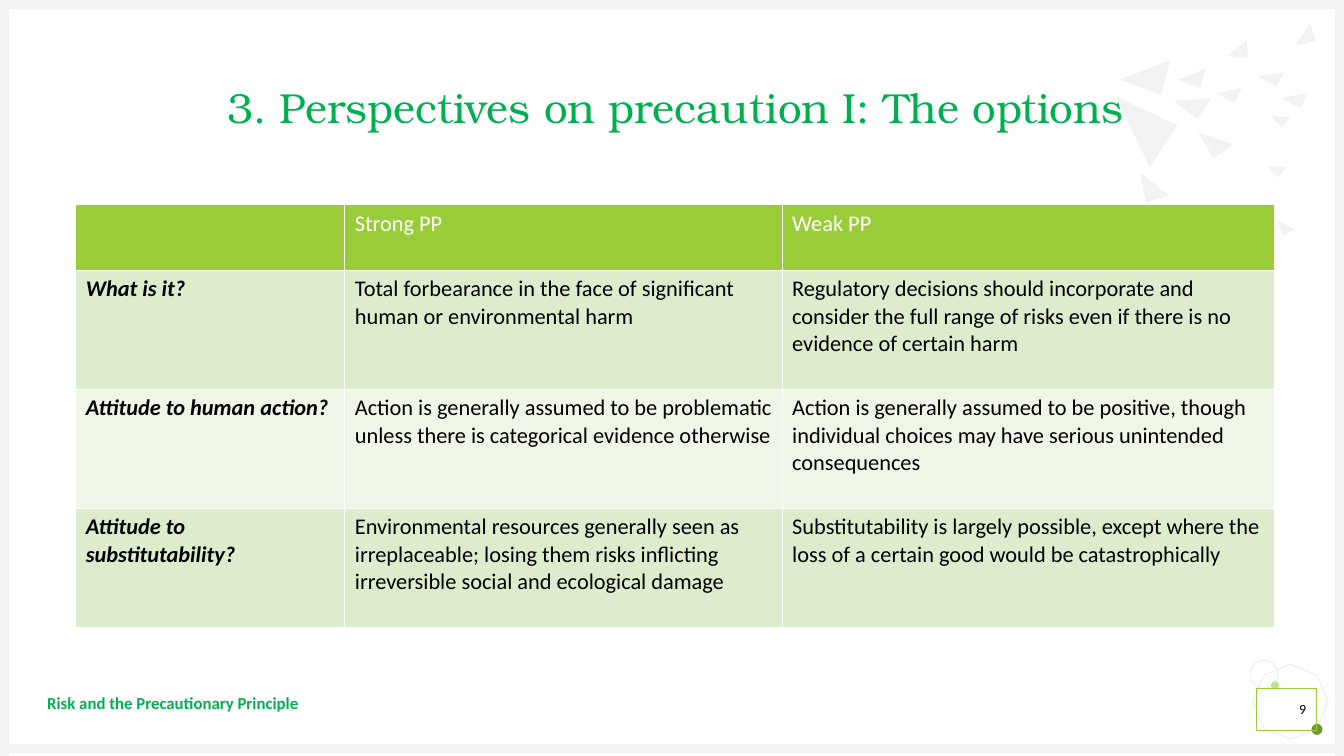
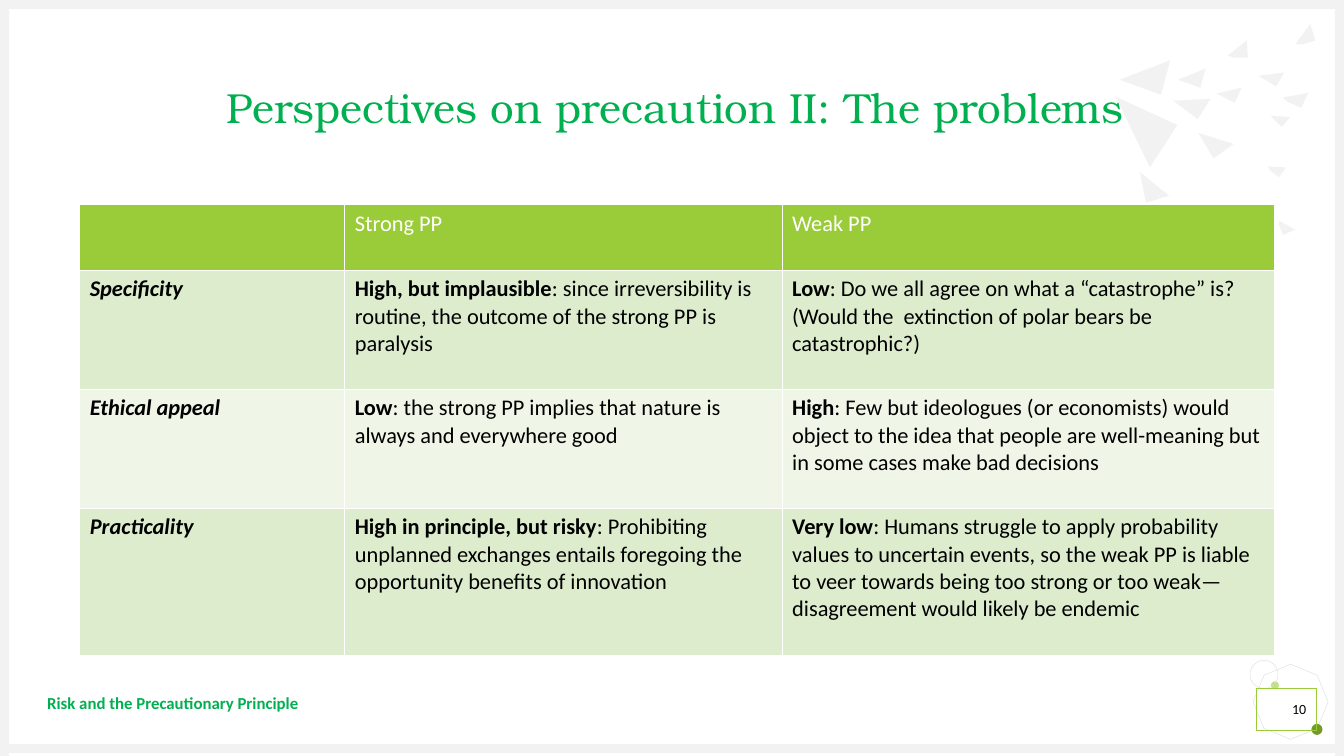
from lxml import etree
from pptx import Presentation
from pptx.dml.color import RGBColor
from pptx.enum.shapes import MSO_SHAPE
from pptx.enum.text import MSO_ANCHOR, PP_ALIGN
from pptx.oxml.ns import qn
from pptx.util import Cm, Pt

RECT, OVAL, OCTAGON = MSO_SHAPE.RECTANGLE, MSO_SHAPE.OVAL, MSO_SHAPE.OCTAGON
MIDDLE = MSO_ANCHOR.MIDDLE
LEFT, CENTER, RIGHT = PP_ALIGN.LEFT, PP_ALIGN.CENTER, PP_ALIGN.RIGHT

WHITE = RGBColor(0xFF, 0xFF, 0xFF)
BLACK = RGBColor(0x00, 0x00, 0x00)
GREEN = RGBColor(0x00, 0xB0, 0x50)
LIME = RGBColor(0x9A, 0xCB, 0x39)
LIGHT_LIME = RGBColor(0xC2, 0xE0, 0x88)
DARK_LIME = RGBColor(0x74, 0x9A, 0x29)
BAND_DARK = RGBColor(0xDE, 0xEC, 0xCE)
BAND_LIGHT = RGBColor(0xEF, 0xF6, 0xE8)
PALE_GRAY = RGBColor(0xF2, 0xF2, 0xF2)
LINE_GRAY = RGBColor(0xD9, 0xD9, 0xD9)

BODY_FONT, TITLE_FONT = "Calibri", "TeX Gyre Bonum"
WIDTH, HEIGHT, EDGE = 33.87, 19.05, 0.23
TABLE_RIGHT, TABLE_TOP = 32.13, 5.16
PP_WIDTHS = [11.02, 12.42]
HEADER = ["", "Strong PP", "Weak PP"]
FOOTER = "Risk and the Precautionary Principle"

FRAME = [
    (0.08, 18.75, WIDTH, EDGE),
    (0, 0, WIDTH, EDGE),
    (0, 0, EDGE, HEIGHT),
    (33.64, 0, EDGE, HEIGHT),
]

# Shard corners are in hundredths of a centimetre.
SHARDS = [
    [(2949, 152), (2926, 239), (2822, 201)],
    [(3051, 249), (3018, 300), (2957, 254)],
    [(3038, 173), (3025, 221), (2969, 201)],
    [(3129, 221), (3112, 259), (3066, 236)],
    [(3142, 102), (3145, 145), (3109, 145), (3094, 140)],
    [(3251, 295), (3231, 320), (3211, 302), (3203, 292)],
    [(3302, 61), (3315, 102), (3282, 112), (3264, 112)],
    [(3236, 183), (3216, 218), (3172, 191)],
    [(3297, 234), (3279, 272), (3246, 257), (3233, 246)],
    [(2967, 315), (2898, 422), (2812, 244)],
    [(3109, 363), (3058, 399), (3020, 335)],
    [(3241, 422), (3223, 447), (3200, 429), (3195, 419)],
    [(2946, 493), (2888, 511), (2873, 434)],
    [(3264, 579), (3233, 592), (3223, 566), (3223, 556)],
]

OPTIONS = [
    ["What is it?",
     ("", "Total forbearance in the face of significant human or environmental harm"),
     ("", "Regulatory decisions should incorporate and consider the full range of "
          "risks even if there is no evidence of certain harm")],
    ["Attitude to human action?",
     ("", "Action is generally assumed to be problematic unless there is categorical "
          "evidence otherwise"),
     ("", "Action is generally assumed to be positive, though individual choices may "
          "have serious unintended consequences")],
    ["Attitude to substitutability?",
     ("", "Environmental resources generally seen as irreplaceable; losing them risks "
          "inflicting irreversible social and ecological damage"),
     ("", "Substitutability is largely possible, except where the loss of a certain "
          "good would be catastrophically")],
]

PROBLEMS = [
    ["Specificity",
     ("High, but implausible", ": since irreversibility is routine, the outcome of "
                               "the strong PP is paralysis"),
     ("Low", ": Do we all agree on what a “catastrophe” is? (Would the  extinction "
             "of polar bears be catastrophic?)")],
    ["Ethical appeal",
     ("Low", ": the strong PP implies that nature is always and everywhere good"),
     ("High", ": Few but ideologues (or economists) would object to the idea that "
              "people are well-meaning but in some cases make bad decisions")],
    ["Practicality",
     ("High in principle, but risky", ": Prohibiting unplanned exchanges entails "
                                      "foregoing the opportunity benefits of innovation"),
     ("Very low", ": Humans struggle to apply probability values to uncertain events, "
                  "so the weak PP is liable to veer towards being too strong or too "
                  "weak—disagreement would likely be endemic")],
]


def write(tf, text, lead="", size=16, font=BODY_FONT, color=BLACK, bold=False,
          italic=False, align=LEFT, spacing=None):
    p = tf.paragraphs[0]
    p.alignment = align
    if spacing:
        p.line_spacing = spacing
    for part, heavy in ((lead, True), (text, bold)):
        if part:
            r = p.add_run()
            r.text = part
            r.font.size, r.font.name = Pt(size), font
            r.font.bold, r.font.italic = heavy, italic
            r.font.color.rgb = color


def set_borders(cell, color, width):
    tc_pr = cell._tc.get_or_add_tcPr()
    for side in ("a:lnL", "a:lnR", "a:lnT", "a:lnB"):
        ln = etree.SubElement(tc_pr, qn(side), w=str(Pt(width)))
        fill = etree.SubElement(ln, qn("a:solidFill"))
        etree.SubElement(fill, qn("a:srgbClr"), val=str(color))


class Deck:
    def __init__(self):
        self.prs = Presentation()
        self.prs.slide_width, self.prs.slide_height = Cm(WIDTH), Cm(HEIGHT)
        self.s = None

    def style(self, sp, fill=None, line=None):
        sp.shadow.inherit = False
        if fill is None:
            sp.fill.background()
        else:
            sp.fill.solid()
            sp.fill.fore_color.rgb = fill
        if line is None:
            sp.line.fill.background()
        else:
            sp.line.color.rgb = line
            sp.line.width = Pt(0.25)
        return sp

    def shape(self, kind, box, fill=None, line=None, rotation=0):
        sp = self.s.shapes.add_shape(kind, *map(Cm, box))
        sp.rotation = rotation
        return self.style(sp, fill, line)

    def shard(self, points):
        builder = self.s.shapes.build_freeform(*points[0], scale=Cm(0.01))
        builder.add_line_segments(points[1:], close=True)
        self.style(builder.convert_to_shape(), PALE_GRAY)

    def text(self, box, text, **fmt):
        tf = self.s.shapes.add_textbox(*map(Cm, box)).text_frame
        tf.word_wrap = True
        tf.vertical_anchor = MIDDLE
        tf.margin_left = tf.margin_right = tf.margin_top = tf.margin_bottom = 0
        write(tf, text, **fmt)

    def decoration(self):
        self.shape(OCTAGON, (31.65, 16.81, 1.75, 1.75), line=LINE_GRAY, rotation=22.7)
        self.shape(OVAL, (32.03, 17.17, 0.2, 0.2), fill=LIGHT_LIME)
        self.shape(OVAL, (33.05, 18.24, 0.28, 0.28), fill=DARK_LIME)
        self.shape(OVAL, (31.5, 16.64, 0.71, 0.71), line=LINE_GRAY)
        for box in FRAME:
            self.shape(RECT, box, fill=PALE_GRAY)
        for points in SHARDS:
            self.shard(points)

    def page_number(self, number):
        sp = self.shape(RECT, (31.65, 17.35, 1.52, 1.04), line=LIME)
        sp.text_frame.vertical_anchor = MIDDLE
        write(sp.text_frame, str(number), size=10, align=RIGHT)

    def slide(self, title, number):
        self.s = self.prs.slides.add_slide(self.prs.slide_layouts[6])
        self.decoration()
        self.text((1.9, 1.7, 30.23, 2.13), title, size=30, font=TITLE_FONT,
                  color=GREEN, align=CENTER, spacing=0.9)
        self.page_number(number)
        self.text((1.19, 17.2, 24.41, 1.02), FOOTER, size=12, color=GREEN, bold=True)

    def table(self, rows, label_width, heights):
        widths = [label_width] + PP_WIDTHS
        left = TABLE_RIGHT - sum(widths)
        frame = self.s.shapes.add_table(
            len(heights), len(widths), Cm(left), Cm(TABLE_TOP),
            Cm(sum(widths)), Cm(sum(heights)))
        table = frame.table
        table.horz_banding = False
        for column, width in zip(table.columns, widths):
            column.width = Cm(width)
        for i, (row, height) in enumerate(zip([HEADER] + rows, heights)):
            table.rows[i].height = Cm(height)
            band = LIME if i == 0 else BAND_DARK if i % 2 else BAND_LIGHT
            for j, content in enumerate(row):
                cell = table.cell(i, j)
                set_borders(cell, WHITE, 1)
                cell.fill.solid()
                cell.fill.fore_color.rgb = band
                if i == 0:
                    write(cell.text_frame, content, color=WHITE)
                elif j == 0:
                    write(cell.text_frame, content, bold=True, italic=True)
                else:
                    lead, text = content
                    write(cell.text_frame, text, lead=lead)


def main():
    deck = Deck()
    deck.slide("3. Perspectives on precaution I: The options", 9)
    deck.table(OPTIONS, 6.78, [1.65, 3, 3, 3])
    deck.slide("Perspectives on precaution II: The problems", 10)
    deck.table(PROBLEMS, 6.68, [1.65, 3, 3, 3.7])
    deck.prs.save("out.pptx")


if __name__ == "__main__":
    main()
